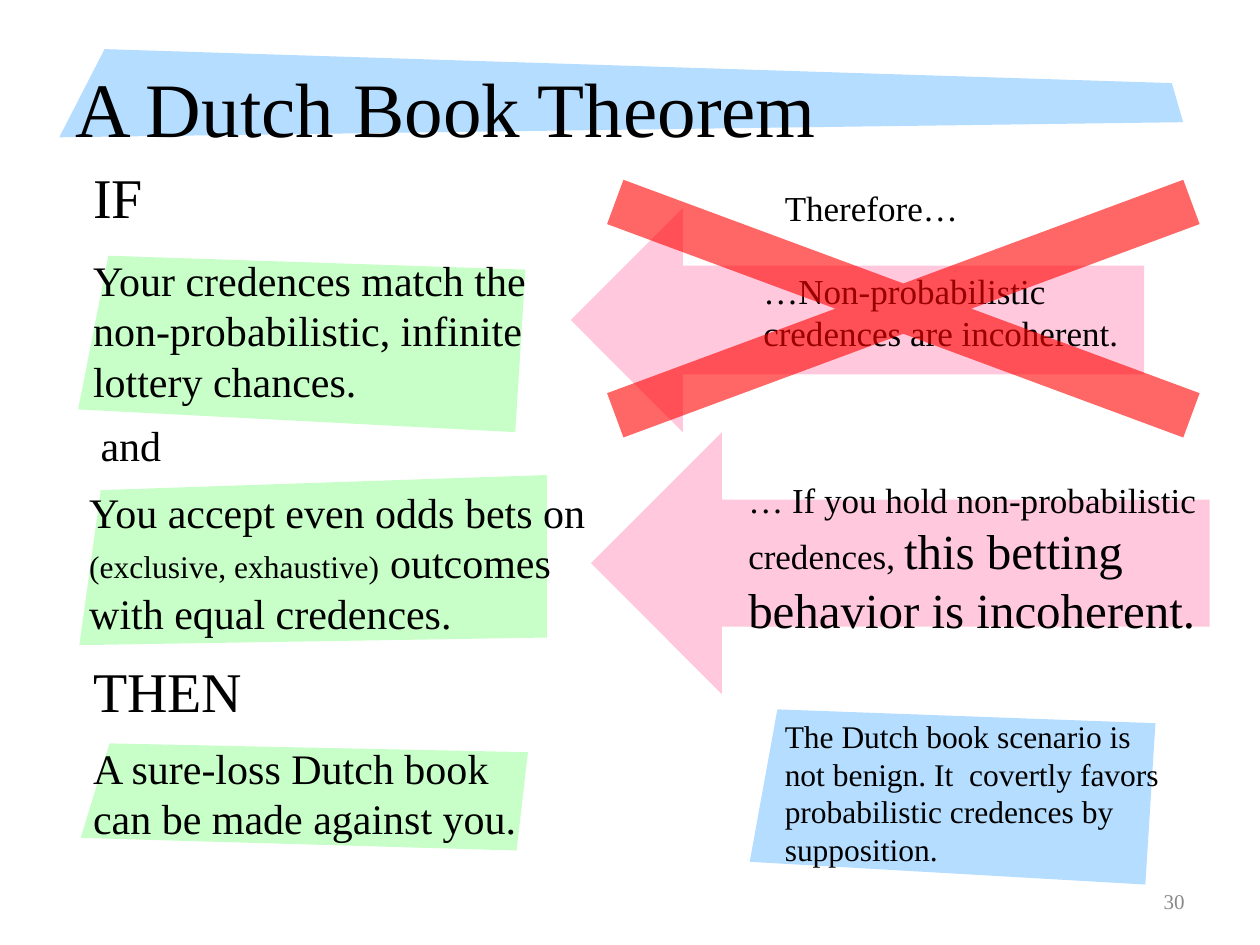
from lxml import etree
from pptx import Presentation
from pptx import util as u
from pptx.dml.color import RGBColor
from pptx.enum import shapes, text
from pptx.oxml.ns import qn

FONT = "Times New Roman"
COLORS = {"ink": "000000", "number": "898989", "green": "C8FFC8",
          "blue": "B4DDFF", "pink": "FFC8DC", "red": "FF0000"}


def paint(sp, color):
    """Give a shape a flat fill with no line or shadow."""
    sp.shadow.inherit = False
    sp.fill.solid()
    sp.fill.fore_color.rgb = RGBColor.from_string(COLORS[color])
    sp.line.fill.background()


def add_text(parent, box, runs, size=24, color="ink", wrap=True, middle=False, right=False):
    """Add a text box holding a string or a list of (text, size) runs."""
    tf = parent.add_textbox(*map(u.Inches, box)).text_frame
    tf.word_wrap = wrap
    tf.vertical_anchor = text.MSO_ANCHOR.MIDDLE if middle else text.MSO_ANCHOR.TOP
    p = tf.paragraphs[0]
    p.alignment = text.PP_ALIGN.RIGHT if right else text.PP_ALIGN.LEFT
    for words, points in [(runs, size)] if isinstance(runs, str) else runs:
        r = p.add_run()
        r.text = words
        r.font.size = u.Pt(points)
        r.font.name = FONT
        r.font.color.rgb = RGBColor.from_string(COLORS[color])


def add_patch(parent, x, y, corners, color):
    """Draw a slanted four-sided patch with corners offset from x, y."""
    points = [(u.Inches(x + dx), u.Inches(y + dy)) for dx, dy in corners]
    builder = parent.build_freeform(*points[0], scale=1.0)
    builder.add_line_segments(points[1:], close=True)
    paint(builder.convert_to_shape(), color)


def add_preset(parent, kind, box, color, adjustments):
    """Draw an adjusted preset shape."""
    sp = parent.add_shape(kind, *map(u.Inches, box))
    for i, value in enumerate(adjustments):
        sp.adjustments[i] = value
    paint(sp, color)
    return sp


def add_title(s, x, y):
    """Place the heading over its blue streak."""
    add_patch(s.shapes, x, y, [(0.33, 0.09), (8.8, 0.36), (8.89, 0.67), (-0.03, 0.79)], "blue")
    add_text(s.shapes, (x, y, 8.76, 1.1), "A Dutch Book Theorem", size=44, middle=True)


def add_argument(s, x, y):
    """Place the premises and conclusion down the left column."""
    patches = [
        (0.79, [(0.22, 0), (3.53, 0.11), (3.45, 1.4), (-0.02, 1.22)]),
        (2.53, [(0.16, 0.12), (3.7, 0), (3.7, 1.29), (-0.01, 1.35)]),
        (4.66, [(0.23, 0), (3.55, 0.07), (3.46, 0.85), (0, 0.75)]),
    ]
    for dy, corners in patches:
        add_patch(s.shapes, x, y + dy, corners, "green")
    for dy, w, word in [(0, 0.61, "IF"), (3.92, 1.4, "THEN")]:
        add_text(s.shapes, (x, y + dy, w, 0.64), word, size=32, wrap=False)
    claims = [
        (0, 0.73, 4.1, 1.31, "Your credences match the non-probabilistic, infinite lottery chances."),
        (0.06, 2.04, 1.08, 0.51, "and"),
        (-0.03, 2.57, 4.36, 1.31, [("You accept even odds bets on ", 24),
                                   ("(exclusive, exhaustive)", 18),
                                   (" outcomes with equal credences.", 24)]),
        (0, 4.6, 3.81, 0.91, "A sure-loss Dutch book can be made against you."),
    ]
    for dx, dy, w, h, runs in claims:
        add_text(s.shapes, (x + dx, y + dy, w, h), runs)


def add_arrow(s, x, y, w, h, texts):
    """Group a pink left arrow with its texts, placed from the arrow's corner."""
    group = s.shapes.add_group_shape().shapes
    add_preset(group, shapes.MSO_SHAPE.LEFT_ARROW, (x, y, w, h), "pink", (0.485, 0.5))
    for (dx, dy, tw, th), runs, wrap in texts:
        add_text(group, (x + dx, y + dy, tw, th), runs, size=20, wrap=wrap)


def add_remark(s, x, y):
    """Group the closing remark with its blue patch."""
    group = s.shapes.add_group_shape().shapes
    add_patch(group, x, y, [(0.22, 0), (3.22, 0.11), (3.14, 1.39), (0, 1.21)], "blue")
    add_text(group, (x + 0.18, y + 0.01, 3.19, 1.31),
             "The Dutch book scenario is not benign. It  covertly favors "
             "probabilistic credences by supposition.", size=18)


def add_cross(s, x, y, w, h):
    """Strike out the rejected conclusion with a translucent red cross."""
    sp = add_preset(s.shapes, shapes.MSO_SHAPE.MATH_MULTIPLY, (x, y, w, h), "red", (0.115,))
    color = sp.fill._xPr.find(qn("a:solidFill"))[0]
    etree.SubElement(color, qn("a:alpha")).set("val", "60000")


def main():
    """Build and save the slide."""
    prs = Presentation()
    prs.slide_width, prs.slide_height = u.Inches(10), u.Inches(7.5)
    s = prs.slides.add_slide(prs.slide_layouts[6])
    add_title(s, 0.5, 0.3)
    add_text(s.shapes, (7.17, 6.95, 2.33, 0.4), "30", size=12, color="number",
             middle=True, right=True)
    add_argument(s, 0.64, 1.24)
    add_arrow(s, 4.53, 1.65, 4.55, 1.78, [
        ((1.43, 0.44, 3.46, 0.77), "…Non-probabilistic credences are incoherent.", True),
        ((1.6, -0.22, 1.59, 0.44), "Therefore…", False),
    ])
    add_arrow(s, 4.69, 3.43, 4.91, 2.08, [
        ((1.15, 0.32, 3.82, 1.38),
         [("… If you hold non-probabilistic credences, ", 20),
          ("this betting behavior is incoherent.", 28)], True),
    ])
    add_remark(s, 5.95, 5.63)
    add_cross(s, 2.77, 0.82, 8.8, 3.26)
    prs.save("out.pptx")


if __name__ == "__main__":
    main()
